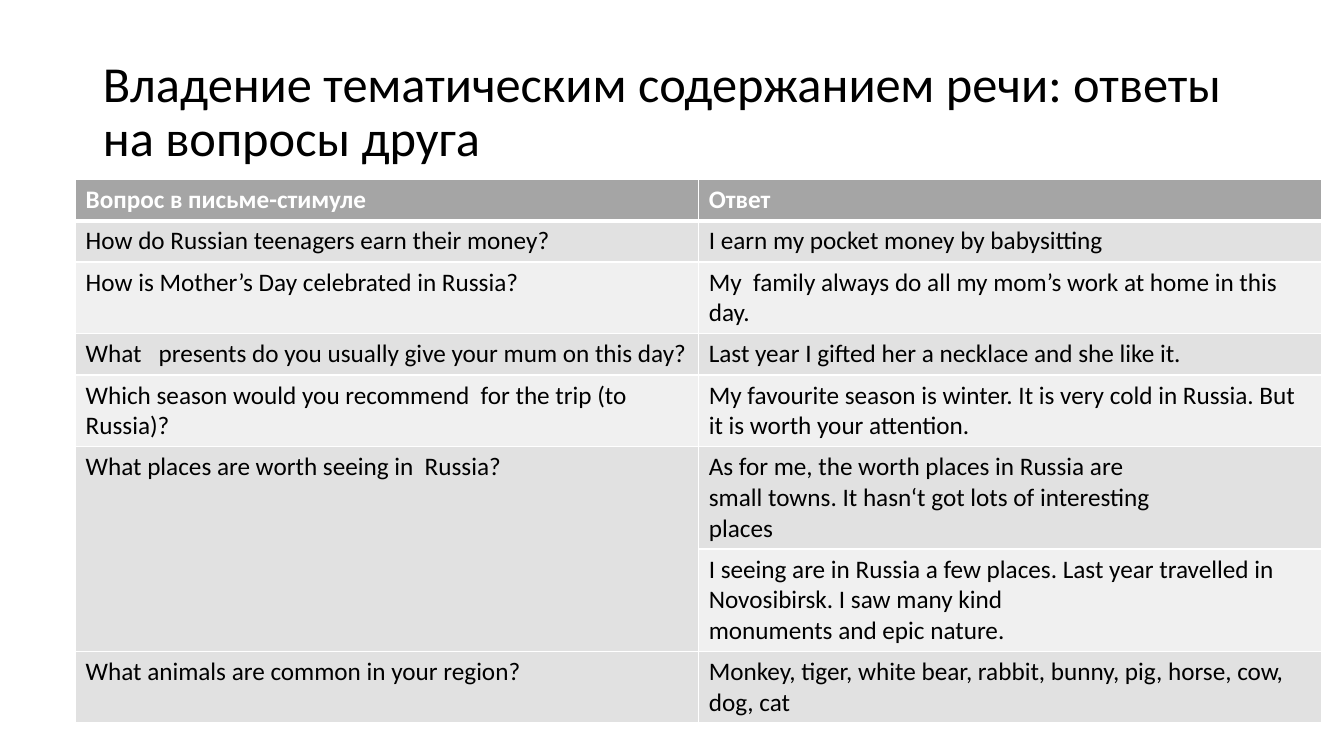
import pptx
import pptx.dml.color
import pptx.enum.text
import pptx.oxml.ns
import pptx.util
from lxml import etree
from pptx.util import Inches

COLORS = {"text": "000000", "white": "FFFFFF", "header": "A5A5A5",
          "odd": "E1E1E1", "even": "F0F0F0"}
FONT = "Calibri"
TITLE = "Владение тематическим содержанием речи: ответы на вопросы друга"
ANSWERS = [
    ("Вопрос в письме-стимуле", "Ответ"),
    ("How do Russian teenagers earn their money?",
     "I earn my pocket money by babysitting"),
    ("How is Mother’s Day celebrated in Russia?",
     "My  family always do all my mom’s work at home in this day."),
    ("What   presents do you usually give your mum on this day?",
     "Last year I gifted her a necklace and she like it."),
    ("Which season would you recommend  for the trip (to Russia)?",
     "My favourite season is winter. It is very cold in Russia. "
     "But it is worth your attention."),
    ("What places are worth seeing in  Russia?",
     "As for me, the worth places in Russia are\n"
     "small towns. It hasn‘t got lots of interesting\nplaces"),
    (None,
     "I seeing are in Russia a few places. Last year travelled in "
     "Novosibirsk. I saw many kind\nmonuments and epic nature."),
    ("What animals are common in your region?",
     "Monkey, tiger, white bear, rabbit, bunny, pig, horse, cow, dog, cat"),
]


def rgb(name):
    """Return the named palette colour."""
    return pptx.dml.color.RGBColor.from_string(COLORS[name])


def format_text(frame, size, color, bold=False):
    """Apply one font to every run of a text frame."""
    for paragraph in frame.paragraphs:
        for run in paragraph.runs:
            run.font.name = FONT
            run.font.size = pptx.util.Pt(size)
            run.font.bold = bold
            run.font.color.rgb = rgb(color)


def add_borders(cell, top, bottom):
    """Draw white cell borders with the given top and bottom widths in points."""
    properties = cell._tc.get_or_add_tcPr()
    qn = pptx.oxml.ns.qn
    for side, width in (("L", 1), ("R", 1), ("T", top), ("B", bottom)):
        line = etree.SubElement(properties, qn(f"a:ln{side}"),
                                w=str(pptx.util.Pt(width)))
        fill = etree.SubElement(line, qn("a:solidFill"))
        etree.SubElement(fill, qn("a:srgbClr"), val=COLORS["white"])


def fill_title(slide, left, top, width, height):
    """Place the slide title in the given box."""
    title = slide.shapes.title
    title.left, title.top, title.width, title.height = left, top, width, height
    frame = title.text_frame
    frame.text = TITLE
    frame.word_wrap = True
    frame.auto_size = pptx.enum.text.MSO_AUTO_SIZE.NONE
    frame.vertical_anchor = pptx.enum.text.MSO_ANCHOR.MIDDLE
    frame.paragraphs[0].alignment = pptx.enum.text.PP_ALIGN.LEFT
    frame.paragraphs[0].line_spacing = 0.9
    format_text(frame, 36, "text")


def add_answers(slide, left, top, width, row_height):
    """Build the table of questions and answers in the given box."""
    table = slide.shapes.add_table(len(ANSWERS), 2, left, top, width,
                                   row_height * len(ANSWERS)).table
    for index, texts in enumerate(ANSWERS):
        table.rows[index].height = row_height
        header = index == 0
        band = "header" if header else "odd" if index % 2 else "even"
        for column, text in enumerate(texts):
            cell = table.cell(index, column)
            add_borders(cell, 3 if index == 1 else 1, 3 if header else 1)
            cell.fill.solid()
            cell.fill.fore_color.rgb = rgb(band)
            if text is None:
                table.cell(index - 1, column).merge(cell)
            else:
                cell.text_frame.text = text
                format_text(cell.text_frame, 18,
                            "white" if header else "text", header)


def main():
    """Build and save the presentation."""
    presentation = pptx.Presentation()
    presentation.slide_width = Inches(13.33)
    presentation.slide_height = Inches(7.5)
    slide = presentation.slides.add_slide(presentation.slide_layouts[5])
    fill_title(slide, Inches(0.92), Inches(0.4), Inches(11.5), Inches(1.45))
    add_answers(slide, Inches(0.75), Inches(1.78), Inches(12.36), Inches(0.41))
    presentation.save("out.pptx")


if __name__ == "__main__":
    main()
